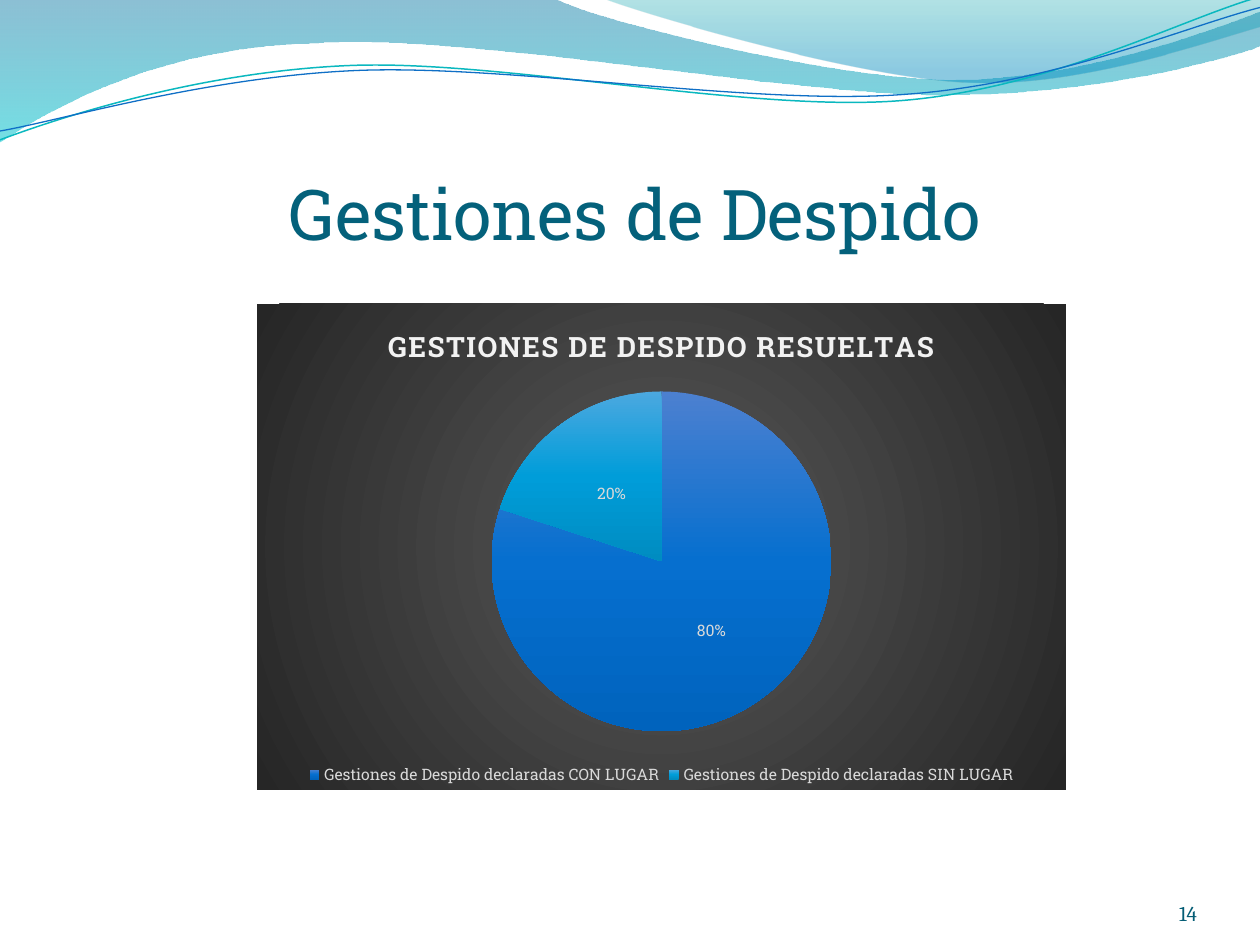
import math

import pptx
import pptx.chart.data
import pptx.dml.color
import pptx.enum.chart
import pptx.enum.text
import pptx.oxml
import pptx.oxml.ns
import pptx.util

Inches = pptx.util.Inches
qn = pptx.oxml.ns.qn

THEME = {
    "heading_font": "Roboto Slab",
    "number_font": "Cambria",
    "heading": "04617B",
    "number": "045D75",
    "chart_title": "F2F2F2",
    "chart_text": "D9D9D9",
    "heading_size": 40,
    "number_size": 12,
    "chart_title_size": 16,
    "chart_size": 9,
    "backdrop": [(0, "595959", 100), (100, "262626", 100)],
    "slices": [
        [(0, "4C80D0", 100), (50, "066FCF", 100), (100, "0063BD", 100)],
        [(0, "4BA8E0", 100), (50, "009DD9", 100), (100, "008CC1", 100)],
    ],
}

TITLE = "Gestiones de Despido"
PAGE_NUMBER = "14"
CHART_TITLE = "GESTIONES DE DESPIDO RESUELTAS"
RESULTS = [
    ("Gestiones de Despido declaradas CON LUGAR", 80),
    ("Gestiones de Despido declaradas SIN LUGAR", 20),
]
PLOT_LAYOUT = {"x": 0.29, "y": 0.18, "w": 0.42, "h": 0.7}

LINE_TILT = 357.3
WAVES = [
    {
        "route": [(0, 0), (4.4, -0.01), (4.76, 0.17, 6.64, 0.63, 7.58, 0.63),
                  (8.53, 0.63, 9.58, 0.26, 10, 0.09), (10.01, 0.36),
                  (9.83, 0.44, 8.7, 0.76, 7.46, 0.75),
                  (6.22, 0.75, 3.82, 0.28, 2.57, 0.34),
                  (1.29, 0.36, 0.46, 0.83, -0.01, 1.13), (0, 0)],
        "stops": [(0, "0074A1", 45), (100, "00C6CF", 55)],
    },
    {
        "route": [(4.79, -0.01), (5.09, 0.11, 6.82, 0.62, 7.69, 0.65),
                  (8.56, 0.69, 9.61, 0.32, 10, 0.21), (10, 0), (4.79, -0.01)],
        "stops": [(0, "00A1A9", 30), (80, "008BBF", 45)],
    },
    {
        "route": [(0, 1.11), (0.48, 0.93, 1.58, 0.57, 2.77, 0.52),
                  (3.95, 0.47, 5.93, 0.89, 7.13, 0.8),
                  (8.33, 0.71, 9.38, 0.15, 9.98, -0.02)],
        "line": ("0AB8BF", 0.85),
        "center": (4.99, 0.58),
    },
    {
        "route": [(0, 1.04), (0.47, 0.96, 1.64, 0.61, 2.83, 0.56),
                  (4.03, 0.51, 5.97, 0.84, 7.17, 0.75),
                  (8.36, 0.67, 9.41, 0.21, 10, 0.06)],
        "line": ("0F6FC6", 0.75),
        "center": (5, 0.59),
    },
]


def color(value):
    return pptx.dml.color.RGBColor.from_string(value)


def style_font(font, name, size, value):
    font.name = name
    font.size = pptx.util.Pt(size)
    font.color.rgb = color(value)


def gradient(stops, radial=False):
    marks = "".join(
        f'<a:gs pos="{place * 1000}"><a:srgbClr val="{value}">'
        f'<a:alpha val="{alpha * 1000}"/></a:srgbClr></a:gs>'
        for place, value, alpha in stops
    )
    if radial:
        course = ('<a:path path="circle"><a:fillToRect l="50000" t="50000" '
                  'r="50000" b="50000"/></a:path>')
    else:
        course = '<a:lin ang="5400000" scaled="0"/>'
    return pptx.oxml.parse_xml(
        f'<a:gradFill {pptx.oxml.ns.nsdecls("a")} rotWithShape="1">'
        f"<a:gsLst>{marks}</a:gsLst>{course}</a:gradFill>"
    )


def put_gradient(properties, stops):
    properties.replace(properties.find(qn("a:noFill")), gradient(stops))


def level(point, center):
    angle = math.radians(-LINE_TILT)
    x, y = point[0] - center[0], point[1] - center[1]
    return (center[0] + x * math.cos(angle) - y * math.sin(angle),
            center[1] + x * math.sin(angle) + y * math.cos(angle))


def bend(shape, route):
    segments = iter(shape.element.xpath(".//a:lnTo"))
    for leg in route[1:]:
        first = next(segments)
        if len(leg) == 2:
            continue
        first.addprevious(pptx.oxml.parse_xml(
            f'<a:cubicBezTo {pptx.oxml.ns.nsdecls("a")}/>'))
        curve = first.getprevious()
        for segment in (first, next(segments), next(segments)):
            curve.append(segment[0])
            segment.getparent().remove(segment)


def add_wave(page, wave):
    route = wave["route"]
    points = [leg[i:i + 2] for leg in route for i in range(0, len(leg), 2)]
    if "center" in wave:
        points = [level(point, wave["center"]) for point in points]
    points = [(Inches(x), Inches(y)) for x, y in points]
    builder = page.shapes.build_freeform(*points[0])
    builder.add_line_segments(points[1:], close="stops" in wave)
    shape = builder.convert_to_shape()
    bend(shape, route)
    shape.shadow.inherit = False
    shape.fill.background()
    if "stops" in wave:
        shape.line.fill.background()
        put_gradient(shape.element.spPr, wave["stops"])
    else:
        value, width = wave["line"]
        shape.rotation = LINE_TILT
        shape.line.color.rgb = color(value)
        shape.line.width = pptx.util.Pt(width)


def add_text(page, place, text, align, top_inset, font):
    box = page.shapes.add_textbox(*map(Inches, place))
    frame = box.text_frame
    frame.word_wrap = True
    frame.vertical_anchor = pptx.enum.text.MSO_ANCHOR.BOTTOM
    frame.margin_left = frame.margin_right = frame.margin_bottom = 0
    frame.margin_top = Inches(top_inset)
    para = frame.paragraphs[0]
    para.alignment = align
    span = para.add_run()
    span.text = text
    style_font(span.font, *font)


def add_results_chart(page, place):
    data = pptx.chart.data.CategoryChartData()
    data.categories = [name for name, share in RESULTS]
    data.add_series("Series 1", [share for name, share in RESULTS])
    chart = page.shapes.add_chart(
        pptx.enum.chart.XL_CHART_TYPE.PIE, *map(Inches, place), data
    ).chart
    small = (THEME["heading_font"], THEME["chart_size"], THEME["chart_text"])
    style_font(chart.font, *small)
    chart.has_title = True
    span = chart.chart_title.text_frame.paragraphs[0].add_run()
    span.text = CHART_TITLE
    span.font.bold = True
    style_font(span.font, THEME["heading_font"], THEME["chart_title_size"],
               THEME["chart_title"])
    chart.element.xpath("//c:title//a:r/a:rPr")[0].set("spc", "100")
    chart.chart_title.include_in_layout = False
    chart.has_legend = True
    chart.legend.position = pptx.enum.chart.XL_LEGEND_POSITION.BOTTOM
    chart.legend.include_in_layout = False
    style_font(chart.legend.font, *small)
    plot = chart.plots[0]
    plot.vary_by_categories = True
    plot.has_data_labels = True
    labels = plot.data_labels
    labels.show_percentage = True
    labels.show_value = False
    labels.number_format = "0%"
    labels.number_format_is_linked = False
    labels.position = pptx.enum.chart.XL_LABEL_POSITION.CENTER
    style_font(labels.font, *small)
    for index in range(len(RESULTS)):
        point = plot.series[0].points[index]
        point.format.fill.background()
        point.format.line.fill.background()
    for properties, stops in zip(chart.element.xpath("//c:dPt/c:spPr"), THEME["slices"]):
        put_gradient(properties, stops)
    names = pptx.oxml.ns.nsdecls("c", "a")
    backdrop = pptx.oxml.parse_xml(f"<c:spPr {names}><a:ln><a:noFill/></a:ln></c:spPr>")
    backdrop.insert(0, gradient(THEME["backdrop"], radial=True))
    chart.element.find(qn("c:txPr")).addprevious(backdrop)
    sizes = "".join(f'<c:{key} val="{value}"/>' for key, value in PLOT_LAYOUT.items())
    layout = pptx.oxml.parse_xml(
        f'<c:layout {names}><c:manualLayout><c:layoutTarget val="inner"/>'
        f'<c:xMode val="edge"/><c:yMode val="edge"/>{sizes}</c:manualLayout></c:layout>'
    )
    area = chart.element.xpath("//c:plotArea")[0]
    for previous in area.findall(qn("c:layout")):
        area.remove(previous)
    area.insert(0, layout)


deck = pptx.Presentation()
deck.slide_width, deck.slide_height = Inches(10), Inches(7.5)
page = deck.slides.add_slide(deck.slide_layouts[6])
for wave in WAVES:
    add_wave(page, wave)
ALIGN = pptx.enum.text.PP_ALIGN
add_text(page, (0.5, 0.77, 9.08, 1.25), TITLE, ALIGN.CENTER, 0.05,
         (THEME["heading_font"], THEME["heading_size"], THEME["heading"]))
add_text(page, (8.67, 6.95, 0.83, 0.4), PAGE_NUMBER, ALIGN.RIGHT, 0,
         (THEME["number_font"], THEME["number_size"], THEME["number"]))
add_results_chart(page, (2.04, 2.41, 6.42, 3.86))
deck.save("out.pptx")
